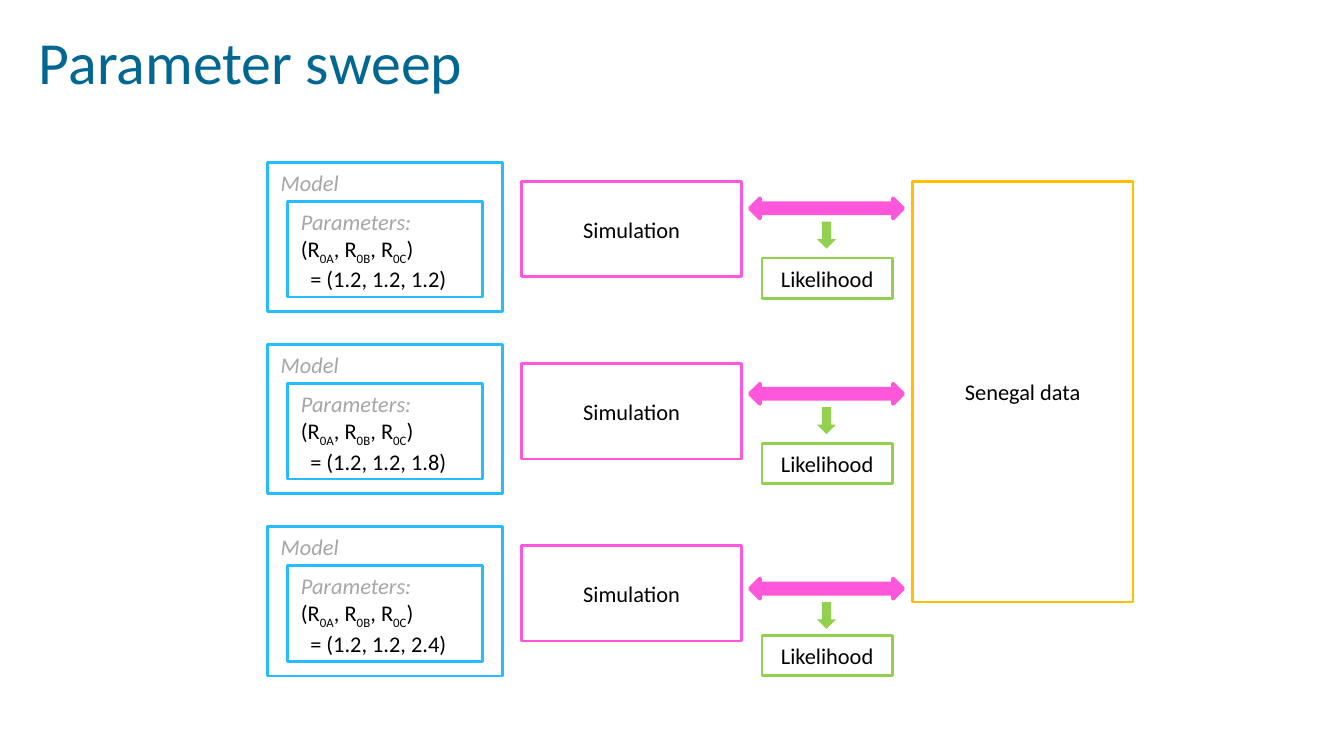
from dataclasses import dataclass

from pptx import Presentation
from pptx.dml.color import RGBColor
from pptx.enum.shapes import MSO_SHAPE
from pptx.enum.text import MSO_ANCHOR, MSO_AUTO_SIZE, PP_ALIGN
from pptx.util import Inches, Pt


@dataclass(frozen=True)
class Theme:
    font: str = "Calibri"
    title_size: int = 32
    body_size: int = 12
    title: str = "006692"
    text: str = "000000"
    label: str = "A6A6A6"
    model: str = "25BDFF"
    simulation: str = "FF57DB"
    likelihood: str = "92D050"
    data: str = "FFC000"


THEME = Theme()

SLIDE_WIDTH = 10
FIRST_ROW_TOP, LAST_ROW_TOP = 1.21, 3.92
SWEEP_VALUES = ["1.2, 1.2, 1.2", "1.2, 1.2, 1.8", "1.2, 1.2, 2.4"]
ROW_STEP = (LAST_ROW_TOP - FIRST_ROW_TOP) / (len(SWEEP_VALUES) - 1)
COMPARISON_CENTRES = [1.55, 2.93, 4.38]
LIKELIHOOD_TOPS = [1.92, 3.3, 4.73]
COMPARISON_X = 6.15


def rgb(colour):
    return RGBColor.from_string(colour)


def format_run(run, colour=THEME.text, size=THEME.body_size, italic=False):
    run.font.name = THEME.font
    run.font.size = Pt(size)
    run.font.color.rgb = rgb(colour)
    run.font.italic = italic


def add_title(slide, text):
    title = slide.shapes.title
    title.left, title.top = Inches(0.2), Inches(0.15)
    title.width, title.height = Inches(9.55), Inches(0.67)
    frame = title.text_frame
    frame.text = text
    frame.auto_size = MSO_AUTO_SIZE.NONE
    frame.vertical_anchor = MSO_ANCHOR.MIDDLE
    frame.margin_left = frame.margin_right = Inches(0.09)
    frame.margin_top = frame.margin_bottom = Inches(0.04)
    frame.paragraphs[0].alignment = PP_ALIGN.LEFT
    frame.paragraphs[0].line_spacing = 0.9
    format_run(frame.paragraphs[0].runs[0], THEME.title, THEME.title_size)


def add_box(slide, left, top, width, height, colour):
    box = slide.shapes.add_shape(MSO_SHAPE.RECTANGLE, Inches(left), Inches(top),
                                 Inches(width), Inches(height))
    box.shadow.inherit = False
    box.fill.background()
    box.line.color.rgb = rgb(colour)
    box.line.width = Pt(1.5)
    box.text_frame.word_wrap = True
    return box


def add_centred_box(slide, left, top, width, height, colour, text):
    frame = add_box(slide, left, top, width, height, colour).text_frame
    frame.text = text
    frame.vertical_anchor = MSO_ANCHOR.MIDDLE
    frame.paragraphs[0].alignment = PP_ALIGN.CENTER
    format_run(frame.paragraphs[0].runs[0])


def add_labelled_box(slide, left, top, width, height, label):
    """Add a model box with a grey label at its top and return its text frame."""
    frame = add_box(slide, left, top, width, height, THEME.model).text_frame
    frame.text = label
    frame.vertical_anchor = MSO_ANCHOR.TOP
    frame.paragraphs[0].alignment = PP_ALIGN.LEFT
    format_run(frame.paragraphs[0].runs[0], THEME.label, italic=True)
    return frame


def add_parameter_names(paragraph):
    """Write the tuple of R0 values with lowered indices."""
    paragraph.alignment = PP_ALIGN.LEFT
    for position, text in enumerate(["(R", "0A", ", R", "0B", ", R", "0C", ")"]):
        run = paragraph.add_run()
        run.text = text
        format_run(run)
        if position % 2:
            run.font._element.set("baseline", "-25000")


def add_model(slide, top, values):
    add_labelled_box(slide, 1.99, top, 1.75, 1.11, "Model")
    frame = add_labelled_box(slide, 2.14, top + 0.29, 1.45, 0.71, "Parameters:")
    add_parameter_names(frame.add_paragraph())
    assignment = frame.add_paragraph()
    assignment.text = f"= ({values})"
    assignment.alignment = PP_ALIGN.LEFT
    assignment._p.get_or_add_pPr().set("marL", str(Inches(0.07)))
    format_run(assignment.runs[0])


def add_arrow(slide, kind, centre_y, width, height, colour):
    """Add a block arrow centred on the comparison column."""
    arrow = slide.shapes.add_shape(kind, Inches(COMPARISON_X - width / 2),
                                   Inches(centre_y - height / 2),
                                   Inches(width), Inches(height))
    arrow.shadow.inherit = False
    arrow.fill.solid()
    arrow.fill.fore_color.rgb = rgb(colour)
    arrow.line.fill.background()
    return arrow


def add_comparison(slide, centre_y, likelihood_top):
    """Add the two-way arrow and the likelihood that results from it."""
    two_way = add_arrow(slide, MSO_SHAPE.LEFT_RIGHT_ARROW, centre_y, 1.14, 0.15,
                        THEME.simulation)
    two_way.line.color.rgb = rgb(THEME.simulation)
    two_way.line.width = Pt(2)
    add_arrow(slide, MSO_SHAPE.DOWN_ARROW, centre_y + 0.2, 0.14, 0.2, THEME.likelihood)
    add_centred_box(slide, 5.67, likelihood_top, 0.97, 0.3, THEME.likelihood, "Likelihood")


def main():
    presentation = Presentation()
    presentation.slide_width = Inches(SLIDE_WIDTH)
    presentation.slide_height = Inches(SLIDE_WIDTH * 9 / 16)
    slide = presentation.slides.add_slide(presentation.slide_layouts[5])

    add_title(slide, "Parameter sweep")
    add_centred_box(slide, 6.79, 1.35, 1.64, 3.13, THEME.data, "Senegal data")
    rows = zip(SWEEP_VALUES, COMPARISON_CENTRES, LIKELIHOOD_TOPS)
    for row, (values, centre_y, likelihood_top) in enumerate(rows):
        top = FIRST_ROW_TOP + row * ROW_STEP
        add_model(slide, top, values)
        add_centred_box(slide, 3.88, top + 0.14, 1.64, 0.71, THEME.simulation, "Simulation")
        add_comparison(slide, centre_y, likelihood_top)

    presentation.save("out.pptx")


if __name__ == "__main__":
    main()
